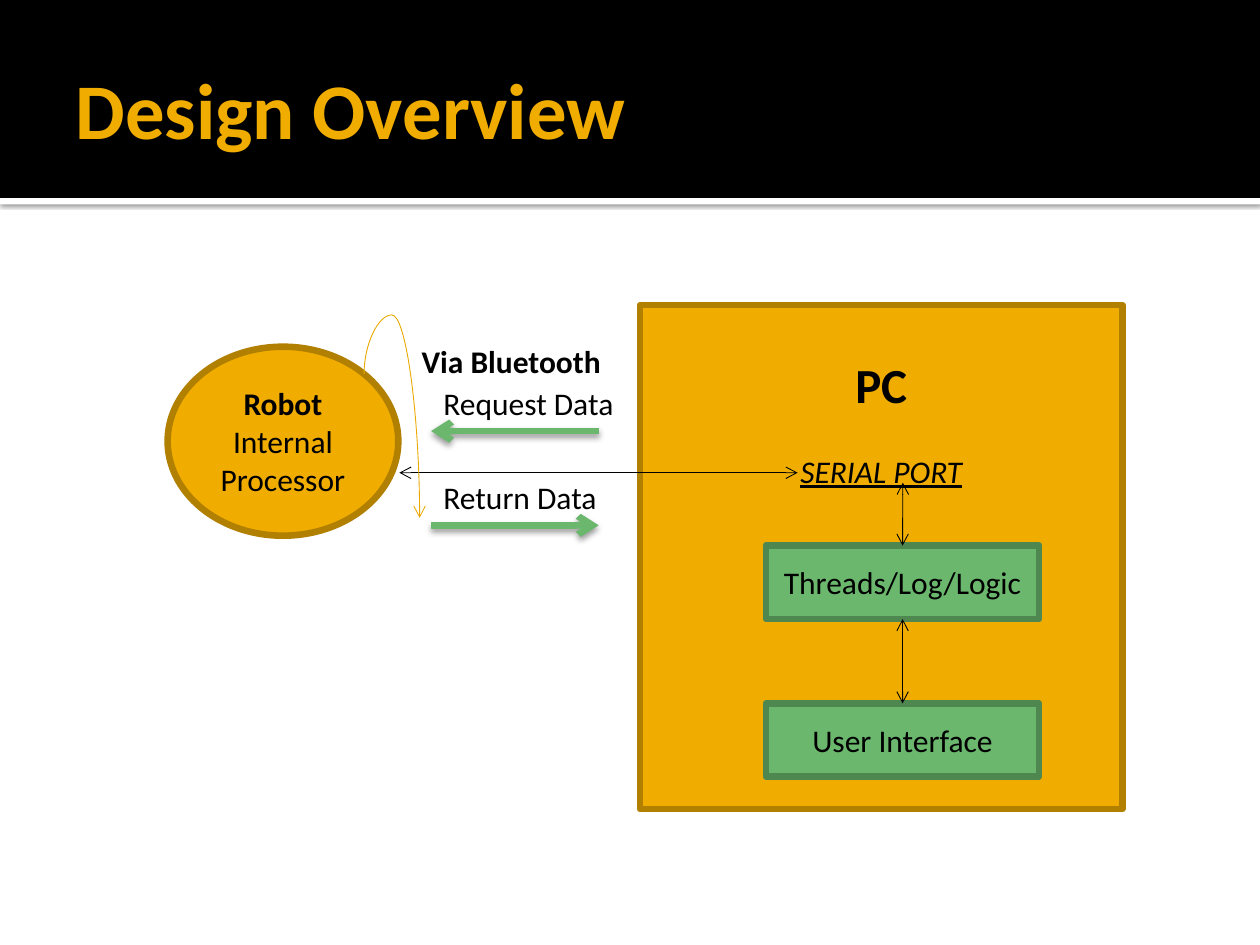
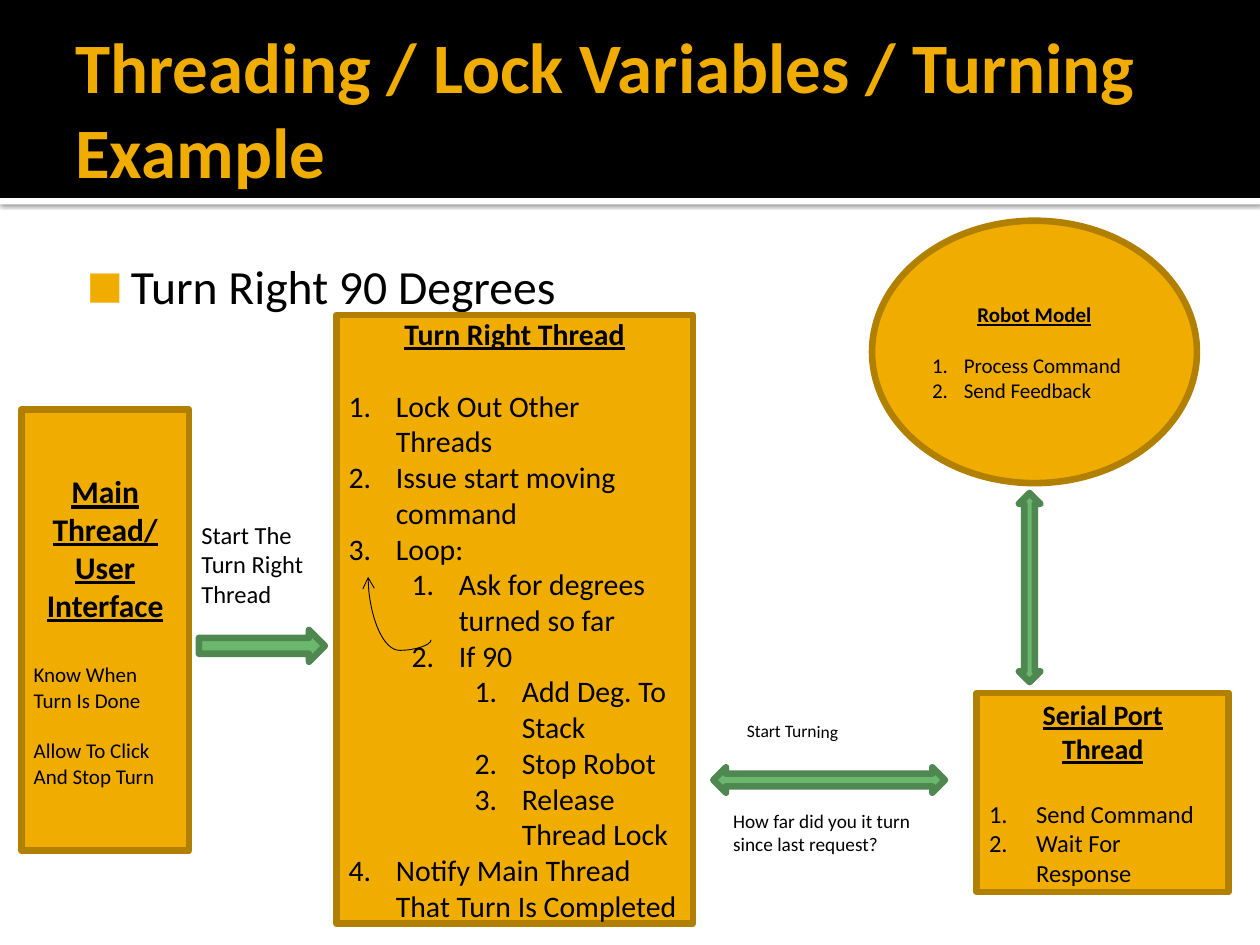
"""Build two slides on a robot control design: overview and threading example."""
from dataclasses import dataclass

from lxml import etree
from pptx import Presentation
from pptx.dml.color import RGBColor
from pptx.enum.shapes import MSO_CONNECTOR, MSO_SHAPE
from pptx.enum.text import MSO_ANCHOR, MSO_AUTO_SIZE, PP_ALIGN
from pptx.oxml.ns import qn
from pptx.util import Cm, Pt

BLACK = RGBColor(0x00, 0x00, 0x00)
WHITE = RGBColor(0xFF, 0xFF, 0xFF)
GOLD = RGBColor(0xF0, 0xAD, 0x00)
AMBER = RGBColor(0xEB, 0xA9, 0x00)
BROWN = RGBColor(0xB2, 0x80, 0x00)
GREEN = RGBColor(0x6B, 0xB7, 0x6D)
MOSS = RGBColor(0x4F, 0x87, 0x51)
FONT = "Calibri"
EDGE = 3.78
TITLE_ONLY = 5

RECT = MSO_SHAPE.RECTANGLE
OVAL = MSO_SHAPE.OVAL
RIGHT = MSO_SHAPE.RIGHT_ARROW
BOTH = MSO_SHAPE.LEFT_RIGHT_ARROW
LINE = MSO_CONNECTOR.STRAIGHT
CURVE = MSO_CONNECTOR.CURVE
MIDDLE = MSO_ANCHOR.MIDDLE
TOP = MSO_ANCHOR.TOP
LEFT = PP_ALIGN.LEFT
CENTER = PP_ALIGN.CENTER


@dataclass
class Row:
    """One paragraph; style holds any of b, i and u, gap is points below."""
    text: str
    size: float
    style: str = ""
    align: int = LEFT
    gap: float = 0
    color: RGBColor = BLACK


@dataclass
class Item(Row):
    """One numbered paragraph at a list level."""
    level: int = 0
    hang: float = 0.95


def head(text, size, gap=0, style="bu"):
    """Return a centred heading row."""
    return Row(text, size, style, CENTER, gap)


def add(parent, tag, **attrs):
    """Append a drawing element."""
    return etree.SubElement(parent, qn(tag), attrs)


def shade(shape, alpha, blur, dist):
    """Give a shape a soft black shadow straight below."""
    props = shape._element.spPr
    for old in props.findall(qn("a:effectLst")):
        props.remove(old)
    shadow = add(add(props, "a:effectLst"), "a:outerShdw", blurRad=str(Pt(blur)),
                 dist=str(Pt(dist)), dir="5400000", rotWithShape="0")
    color = add(shadow, "a:srgbClr", val=str(BLACK))
    add(color, "a:alpha", val=str(alpha * 1000))


def indent(para, left, hang):
    """Set a hanging indent and return the paragraph properties."""
    props = para._p.get_or_add_pPr()
    props.set("marL", str(Cm(left)))
    props.set("indent", str(-Cm(hang)))
    return props


def write(frame, rows):
    """Fill a text frame with rows."""
    frame.text = "\n".join(row.text for row in rows)
    for para, row in zip(frame.paragraphs, rows):
        para.alignment = row.align
        if row.gap:
            para.space_after = Pt(row.gap)
        if isinstance(row, Item):
            para.level = row.level
            props = indent(para, row.hang + 1.27 * row.level, row.hang)
            add(props, "a:buFont", typeface="+mj-lt")
            add(props, "a:buAutoNum", type="arabicPeriod")
        for run in para.runs:
            font = run.font
            font.name, font.size = FONT, Pt(row.size)
            font.color.rgb = row.color
            font.bold = "b" in row.style
            font.italic = "i" in row.style
            font.underline = "u" in row.style


def box(slide, kind, x, y, w, h, fill=GOLD, edge=BROWN, rows=(), anchor=MIDDLE):
    """Add a filled preset shape with optional text."""
    shape = slide.shapes.add_shape(kind, Cm(x), Cm(y), Cm(w), Cm(h))
    shape.shadow.inherit = False
    shape.fill.solid()
    shape.fill.fore_color.rgb = fill
    if edge is None:
        shape.line.fill.background()
    else:
        shape.line.color.rgb = edge
        shape.line.width = Pt(EDGE)
    if rows:
        shape.text_frame.vertical_anchor = anchor
        write(shape.text_frame, rows)
    return shape


def label(slide, x, y, w, h, row, wrap=True):
    """Add a text box with one row."""
    note = slide.shapes.add_textbox(Cm(x), Cm(y), Cm(w), Cm(h))
    note.text_frame.word_wrap = wrap
    write(note.text_frame, [row])
    return note


def link(slide, x1, y1, x2, y2, color=BLACK, width=0.5, twoway=False, kind=LINE):
    """Add a connector with open arrowheads."""
    wire = slide.shapes.add_connector(kind, Cm(x1), Cm(y1), Cm(x2), Cm(y2))
    wire.line.color.rgb = color
    wire.line.width = Pt(width)
    line = wire.line._get_or_add_ln()
    if twoway:
        add(line, "a:headEnd", type="arrow")
    add(line, "a:tailEnd", type="arrow")
    add(wire._element.spPr, "a:effectLst")
    return wire


def bend(slide, x1, y1, x2, y2, bulge, color=BLACK):
    """Add a curved arrow turned a quarter to the left."""
    wire = link(slide, x1, y1, x2, y2, color, kind=CURVE)
    props = wire._element.spPr
    props.find(qn("a:xfrm")).set("rot", "16200000")
    guides = props.find(qn("a:prstGeom")).find(qn("a:avLst"))
    add(guides, "a:gd", name="adj1", fmla=f"val {bulge}")


def bands(slide):
    """Draw the header bands and move them to the shared layout."""
    strip = box(slide, RECT, 0, 3.99, 25.4, 0.13, WHITE, None)
    shade(strip, 60, 2.5, 0.8)
    top = box(slide, RECT, 0, 0, 25.4, 3.99, BLACK, None)
    tree = slide.slide_layout.shapes._spTree
    for place, band in enumerate((strip, top), 2):
        tree.insert(place, band._element)


def start(deck, text, size):
    """Add a slide with its title."""
    slide = deck.slides.add_slide(deck.slide_layouts[TITLE_ONLY])
    title = slide.shapes.title
    title.left, title.top = Cm(1.27), Cm(0.43)
    title.width, title.height = Cm(22.86), Cm(3.48)
    frame = title.text_frame
    frame.vertical_anchor = MIDDLE
    frame.auto_size = MSO_AUTO_SIZE.NONE
    frame.margin_left = Cm(0.25)
    frame.margin_top = frame.margin_right = frame.margin_bottom = Cm(0.13)
    write(frame, [Row(text, size, "b", color=GOLD)])
    return slide


def bullet(slide, text):
    """Add the square-bulleted lead line."""
    note = label(slide, 1.27, 4.93, 10.59, 1.63, Row(text, 27.2))
    frame = note.text_frame
    frame.margin_left, frame.margin_top = Cm(0.15), Cm(0.25)
    props = indent(frame.paragraphs[0], 1.22, 0.89)
    add(add(props, "a:buClr"), "a:srgbClr", val=str(GOLD))
    add(props, "a:buSzPct", val="80000")
    add(props, "a:buFont", typeface=FONT)
    add(props, "a:buChar", char="■")


def design(deck):
    """Build the overview slide."""
    slide = start(deck, "Design Overview", 45)
    bands(slide)
    box(slide, OVAL, 3.38, 6.99, 4.65, 3.81,
        rows=[head("Robot", 18, style="b"), head("Internal Processor", 18, style="")])
    label(slide, 8.25, 6.78, 4.45, 1.02, Row("Via Bluetooth", 18, "b"))
    host = box(slide, RECT, 12.9, 6.15, 9.73, 10.16, anchor=TOP,
               rows=[head("PC", 28, 22, "b"), head("SERIAL PORT", 18, style="iu")])
    host.text_frame.margin_top = Cm(1)
    link(slide, 8.05, 9.53, 16.08, 9.53, twoway=True)
    logic, screen = [
        box(slide, RECT, 15.44, y, 5.51, 1.48, GREEN, MOSS, [head(text, 18, style="")])
        for y, text in ((11, "Threads/Log/Logic"), (14.18, "User Interface"))]
    port = link(slide, 18.2, 11, 18.2, 9.73, twoway=True)
    port.begin_connect(logic, 0)
    view = link(slide, 18.2, 14.18, 18.2, 12.48, twoway=True)
    view.begin_connect(screen, 0)
    view.end_connect(logic, 2)
    for text, y, x1, x2 in (("Request Data", 8.69, 12.07, 8.69),
                            ("Return Data", 10.59, 8.69, 12.07)):
        flow = link(slide, x1, y, x2, y, GREEN, EDGE)
        shade(flow, 38, 3.5, 2)
        label(slide, 8.69, y - 1.07, 4, 1.02, Row(text, 18), wrap=False)
    bend(slide, 9.35, 8.43, 6.45, 9.55, -41100, AMBER)


def turning(deck):
    """Build the threading slide."""
    slide = start(deck, "Threading / Lock Variables / Turning Example", 40.5)
    bullet(slide, "Turn Right 90 Degrees")
    box(slide, RECT, 0.43, 8.26, 3.38, 8.89, rows=[
        head("Main Thread/", 18), head("User Interface", 18, 22),
        Row("Know When Turn Is Done", 12, gap=14.6),
        Row("Allow To Click And Stop Turn", 12)])
    steps = ((0, "Lock Out Other Threads"), (0, "Issue start moving command"),
             (0, "Loop:"), (1, "Ask for degrees turned so far"), (1, "If 90"),
             (2, "Add Deg. To Stack"), (2, "Stop Robot"),
             (2, "Release Thread Lock"),
             (0, "Notify Main Thread That Turn Is Completed"))
    box(slide, RECT, 6.78, 6.35, 7.19, 12.27, rows=[
        head("Turn Right Thread", 17, 20.7),
        *(Item(text, 17, level=level) for level, text in steps)])
    box(slide, RIGHT, 4.01, 12.7, 2.54, 0.64, GREEN, MOSS)
    label(slide, 3.81, 10.36, 2.74, 2.06, Row("Start The Turn Right Thread", 14))
    box(slide, RECT, 19.69, 13.97, 5.08, 4.01, rows=[
        head("Serial Port", 16), head("Thread", 16, 19.5),
        Item("Send Command", 14), Item("Wait For Response", 14)])
    box(slide, BOTH, 14.38, 15.47, 4.67, 0.51, GREEN, MOSS)
    note = label(slide, 14.81, 14.4, 2.74, 0.69, Row("Start Turning", 10))
    note.rotation = 0.3
    label(slide, 14.53, 16.18, 4.6, 1.19,
          Row("How far did you it turn since last request?", 11))
    box(slide, OVAL, 17.58, 4.45, 6.55, 5.29, rows=[
        head("Robot Model", 12, 14.6),
        Item("Process Command", 12, hang=0.64), Item("Send Feedback", 12, hang=0.64)])
    lift = box(slide, BOTH, 18.85, 11.63, 3.81, 0.43, GREEN, MOSS)
    lift.rotation = 90
    bend(slide, 7.42, 12.9, 8.69, 11.63, -16700)


def main():
    """Build and save the deck."""
    deck = Presentation()
    deck.slide_width, deck.slide_height = Cm(25.4), Cm(19.05)
    design(deck)
    turning(deck)
    deck.save("out.pptx")


if __name__ == "__main__":
    main()
